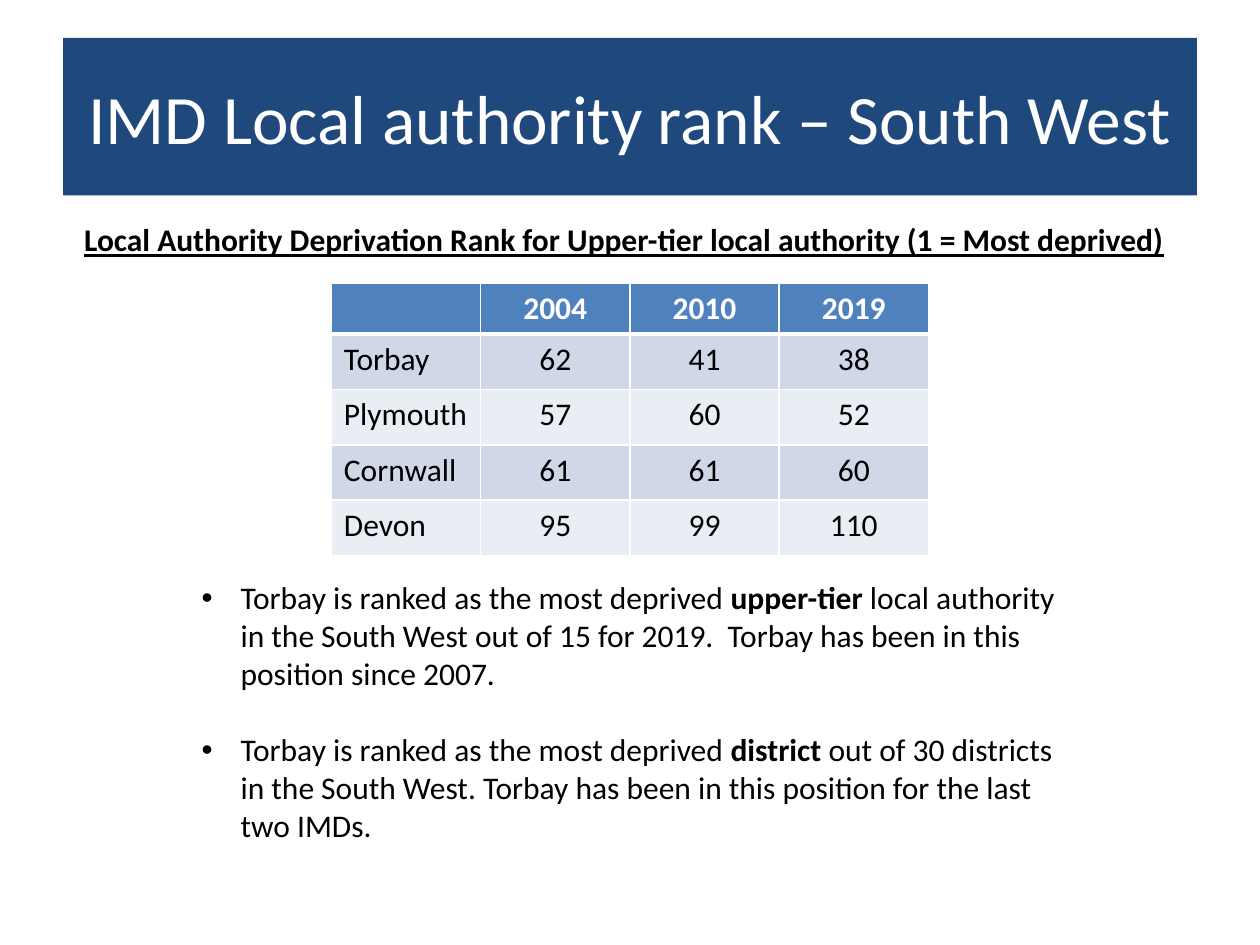
from dataclasses import dataclass

from lxml import etree
from pptx import Presentation
from pptx.dml.color import RGBColor
from pptx.enum import text
from pptx.oxml import ns
from pptx.util import Inches, Pt


@dataclass(frozen=True)
class Theme:
    font: str = "Calibri"
    title_size: float = 39.6
    text_size: float = 18
    navy: str = "1F497D"
    header: str = "4F81BD"
    bands: tuple = ("D0D8E8", "E9EDF4")
    white: str = "FFFFFF"
    black: str = "000000"


THEME = Theme()

TITLE = "IMD Local authority rank – South West"
HEADING = "Local Authority Deprivation Rank for Upper-tier local authority (1 = Most deprived)"
RANKS = [
    ("", "2004", "2010", "2019"),
    ("Torbay", "62", "41", "38"),
    ("Plymouth", "57", "60", "52"),
    ("Cornwall", "61", "61", "60"),
    ("Devon", "95", "99", "110"),
]
# Each finding is a list of (wording, bold) pairs.
FINDINGS = [
    [("Torbay is ranked as the most deprived ", False), ("upper-tier", True),
     (" local authority in the South West out of 15 for 2019.  "
      "Torbay has been in this position since 2007.", False)],
    [("Torbay is ranked as the most deprived ", False), ("district", True),
     (" out of 30 districts in the South West. "
      "Torbay has been in this position for the last two IMDs.", False)],
]


def place(box, left, top, width, height):
    box.left, box.top = Inches(left), Inches(top)
    box.width, box.height = Inches(width), Inches(height)


def add_span(para, wording, size=THEME.text_size, color=THEME.black,
             bold=False, underline=False):
    span = para.add_run()
    span.text = wording
    font = span.font
    font.name, font.size = THEME.font, Pt(size)
    font.bold, font.underline = bold, underline
    font.color.rgb = RGBColor.from_string(color)


def fill_solid(item, color):
    item.fill.solid()
    item.fill.fore_color.rgb = RGBColor.from_string(color)


def add_title(page):
    box = page.shapes.title
    place(box, 0.5, 0.3, 9, 1.25)
    fill_solid(box, THEME.navy)
    frame = box.text_frame
    frame.auto_size = text.MSO_AUTO_SIZE.NONE
    frame.vertical_anchor = text.MSO_ANCHOR.MIDDLE
    para = frame.paragraphs[0]
    para.alignment = text.PP_ALIGN.CENTER
    add_span(para, TITLE, size=THEME.title_size, color=THEME.white)


def add_heading(page):
    box = page.shapes.add_textbox(Inches(0.57), Inches(1.7), Inches(8.85), Inches(0.4))
    box.text_frame.word_wrap = False
    add_span(box.text_frame.paragraphs[0], HEADING, bold=True, underline=True)


def add_findings(page):
    box = page.placeholders[1]
    place(box, 1.5, 4.54, 7.01, 2.22)
    frame = box.text_frame
    frame.auto_size = text.MSO_AUTO_SIZE.SHAPE_TO_FIT_TEXT
    for index, finding in enumerate(FINDINGS):
        para = frame.add_paragraph() if index else frame.paragraphs[0]
        para.space_before = Pt(22 if index else 0)
        properties = para._p.get_or_add_pPr()
        properties.set("marL", str(Inches(0.31)))
        properties.set("indent", str(-Inches(0.31)))
        for wording, bold in finding:
            add_span(para, wording, bold=bold)


def add_borders(cell, above, below):
    """Draw white cell edges; above and below are widths in points."""
    properties = cell._tc.get_or_add_tcPr()
    for side, width in (("L", 1), ("R", 1), ("T", above), ("B", below)):
        line = etree.SubElement(properties, ns.qn(f"a:ln{side}"), w=str(Pt(width)))
        solid = etree.SubElement(line, ns.qn("a:solidFill"))
        etree.SubElement(solid, ns.qn("a:srgbClr"), val=THEME.white)


def add_rank_table(page):
    width, columns = 4.74, len(RANKS[0])
    table = page.shapes.add_table(len(RANKS), columns, Inches(2.63), Inches(2.25),
                                  Inches(width), Inches(2.17)).table
    for column in table.columns:
        column.width = Inches(width / columns)
    for r, values in enumerate(RANKS):
        is_header = r == 0
        table.rows[r].height = Inches(0.4 if is_header else 0.44)
        for c, value in enumerate(values):
            cell = table.cell(r, c)
            add_borders(cell, above=3 if r == 1 else 1, below=3 if is_header else 1)
            fill_solid(cell, THEME.header if is_header else THEME.bands[(r - 1) % 2])
            para = cell.text_frame.paragraphs[0]
            if c:
                para.alignment = text.PP_ALIGN.CENTER
            if value:
                add_span(para, value, bold=is_header,
                         color=THEME.white if is_header else THEME.black)


def main():
    deck = Presentation()
    deck.slide_width, deck.slide_height = Inches(10), Inches(7.5)
    page = deck.slides.add_slide(deck.slide_layouts[1])
    add_title(page)
    add_findings(page)
    add_rank_table(page)
    add_heading(page)
    deck.save("out.pptx")


if __name__ == "__main__":
    main()
